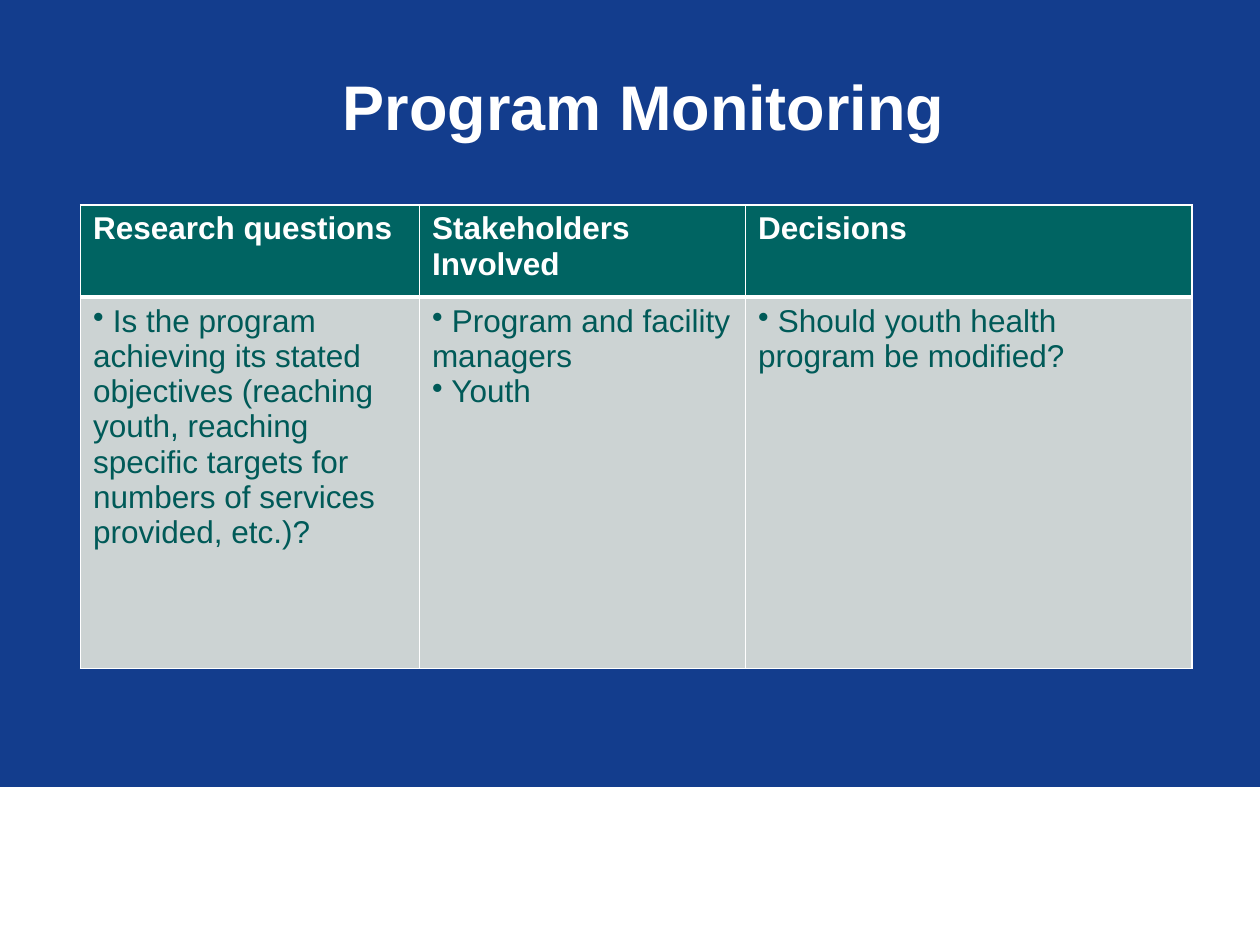
from dataclasses import dataclass

from lxml import etree
from pptx import Presentation
from pptx.dml.color import RGBColor
from pptx.enum.shapes import MSO_SHAPE
from pptx.enum.text import MSO_ANCHOR, PP_ALIGN
from pptx.oxml.ns import qn
from pptx.util import Pt

RECT = MSO_SHAPE.RECTANGLE
MIDDLE = MSO_ANCHOR.MIDDLE
CENTER = PP_ALIGN.CENTER


@dataclass(frozen=True)
class Theme:
    font: str = "Arial"
    title_size: float = 36
    table_size: float = 18
    background: str = "133D8D"
    white: str = "FFFFFF"
    header: str = "006462"
    body: str = "CCD3D3"
    body_text: str = "005A58"
    rule: float = 1
    header_rule: float = 3


class Deck:
    def __init__(self, prs, theme):
        self.theme = theme
        self.s = prs.slides.add_slide(prs.slide_layouts[6])
        self.paint(self.s.background.fill, theme.background)

    def paint(self, fill, color):
        fill.solid()
        fill.fore_color.rgb = RGBColor.from_string(color)

    def run(self, p, text, size, color, bold):
        r = p.add_run()
        r.text = text
        r.font.name = self.theme.font
        r.font.size = Pt(size)
        r.font.bold = bold
        r.font.color.rgb = RGBColor.from_string(color)

    def band(self, x, y, w, h):
        sp = self.s.shapes.add_shape(RECT, Pt(x), Pt(y), Pt(w), Pt(h))
        sp.shadow.inherit = False
        self.paint(sp.fill, self.theme.white)
        self.paint(sp.line.fill, self.theme.white)
        sp.line.width = Pt(0.75)

    def title(self, text, x, y, w, h):
        tf = self.s.shapes.add_textbox(Pt(x), Pt(y), Pt(w), Pt(h)).text_frame
        tf.word_wrap = True
        tf.vertical_anchor = MIDDLE
        p = tf.paragraphs[0]
        p.alignment = CENTER
        self.run(p, text, self.theme.title_size, self.theme.white, True)

    def borders(self, cell, top, bottom):
        tc_pr = cell._tc.get_or_add_tcPr()
        rule = self.theme.rule
        for side, width in zip("LRTB", (rule, rule, top, bottom)):
            ln = etree.SubElement(tc_pr, qn(f"a:ln{side}"), w=str(Pt(width)))
            fill = etree.SubElement(ln, qn("a:solidFill"))
            etree.SubElement(fill, qn("a:srgbClr"), val=self.theme.white)

    def cell(self, cell, lines, is_header):
        t = self.theme
        top, bottom = (t.rule, t.header_rule) if is_header else (t.header_rule, t.rule)
        self.borders(cell, top, bottom)
        self.paint(cell.fill, t.header if is_header else t.body)
        tf = cell.text_frame
        for i, line in enumerate(lines):
            p = tf.add_paragraph() if i else tf.paragraphs[0]
            if is_header:
                self.run(p, line, t.table_size, t.white, True)
            else:
                p_pr = p._p.get_or_add_pPr()
                p_pr.set("marL", "0")
                p_pr.set("indent", "0")
                etree.SubElement(p_pr, qn("a:buChar"), char="•")
                self.run(p, f" {line}", t.table_size, t.body_text, False)

    def table(self, rows, x, y, widths, heights):
        frame = self.s.shapes.add_table(
            len(rows), len(widths), Pt(x), Pt(y), Pt(sum(widths)), Pt(sum(heights)))
        table = frame.table
        for column, width in zip(table.columns, widths):
            column.width = Pt(width)
        for i, (row, height) in enumerate(zip(rows, heights)):
            table.rows[i].height = Pt(height)
            for j, lines in enumerate(row):
                self.cell(table.cell(i, j), lines, i == 0)


def main():
    """Build the program monitoring slide."""
    prs = Presentation()
    prs.slide_width, prs.slide_height = Pt(720), Pt(540)
    deck = Deck(prs, Theme())
    deck.band(0, 450, 720, 90)
    rows = [
        [["Research questions"], ["Stakeholders Involved"], ["Decisions"]],
        [
            ["Is the program achieving its stated objectives (reaching youth, "
             "reaching specific targets for numbers of services provided, etc.)?"],
            ["Program and facility managers", "Youth"],
            ["Should youth health program be modified?"],
        ],
    ]
    deck.table(rows, 46, 117.2, (193.7, 186.3, 255.2), (52.6, 212.2))
    deck.title("Program Monitoring", 62.4, 15.3, 611, 90)
    prs.save("out.pptx")


if __name__ == "__main__":
    main()
